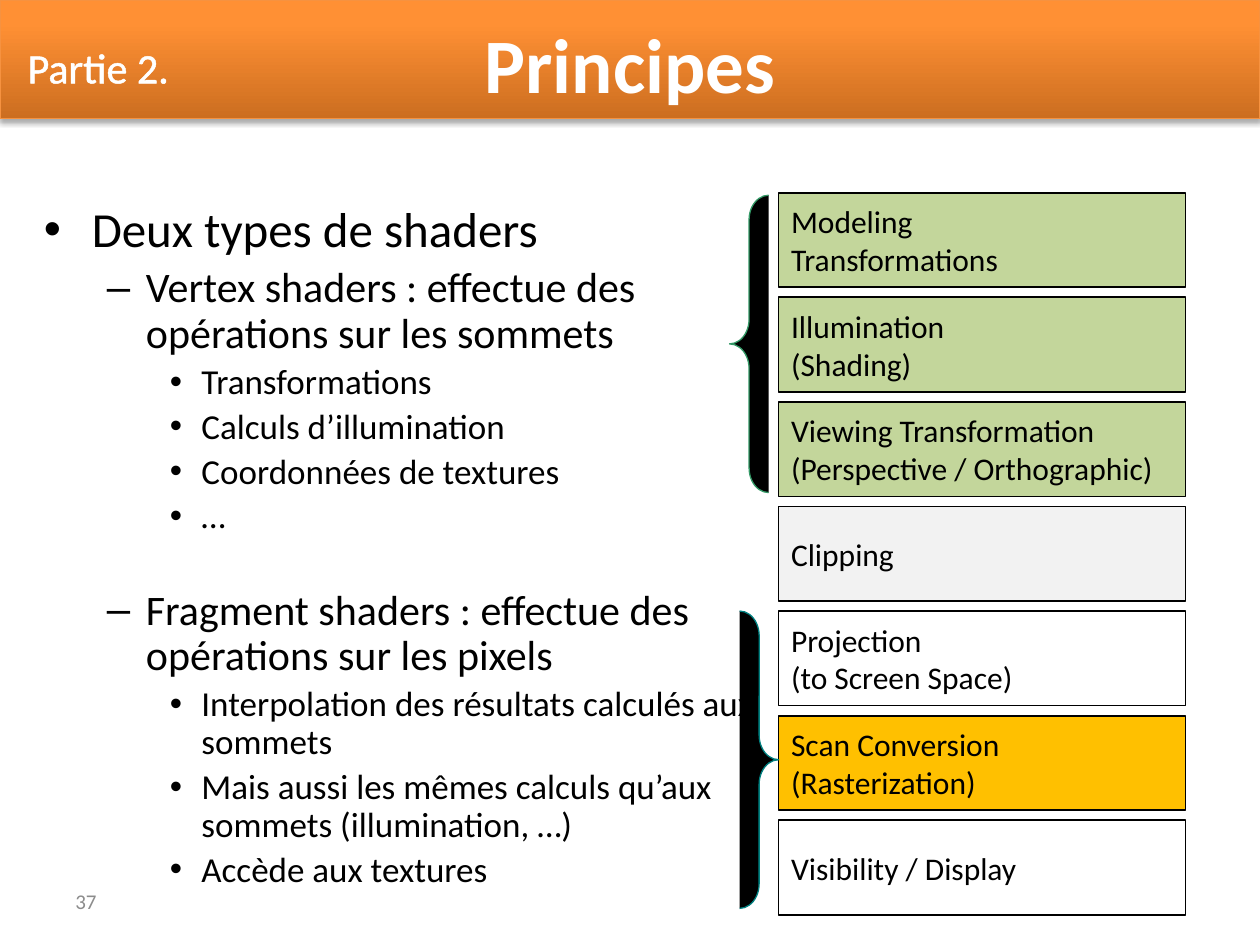
from lxml import etree
from pptx import Presentation
from pptx.dml.color import RGBColor
from pptx.enum.shapes import MSO_SHAPE
from pptx.enum.text import MSO_ANCHOR, PP_ALIGN
from pptx.oxml import parse_xml
from pptx.oxml.ns import nsdecls, qn
from pptx.util import Inches, Pt

RECTANGLE = MSO_SHAPE.RECTANGLE
LEFT_BRACE, RIGHT_BRACE = MSO_SHAPE.LEFT_BRACE, MSO_SHAPE.RIGHT_BRACE
MIDDLE, TOP = MSO_ANCHOR.MIDDLE, MSO_ANCHOR.TOP
LEFT, CENTER = PP_ALIGN.LEFT, PP_ALIGN.CENTER
FONT = "Calibri"

# Per outline level: size in points, bullet, left margin and hanging indent in inches
LEVELS = [(28, "•", 0.38, 0.38), (24, "–", 0.81, 0.31), (20, "•", 1.25, 0.25)]
GROUP_GAP = Pt(30)
OUTLINE = [
    (0, "Deux types de shaders"),
    (1, "Vertex shaders : effectue des opérations sur les sommets"),
    (2, "Transformations"),
    (2, "Calculs d’illumination"),
    (2, "Coordonnées de textures"),
    (2, "…"),
    (1, "Fragment shaders : effectue des opérations sur les pixels"),
    (2, "Interpolation des résultats calculés aux sommets"),
    (2, "Mais aussi les mêmes calculs qu’aux sommets (illumination, …)"),
    (2, "Accède aux textures"),
]
VERTEX, NEUTRAL, PLAIN, FRAGMENT = "C3D69B", "F2F2F2", "FFFFFF", "FFC000"
STAGES = [
    ("Modeling\nTransformations", VERTEX),
    ("Illumination\n(Shading)", VERTEX),
    ("Viewing Transformation\n(Perspective / Orthographic)", VERTEX),
    ("Clipping", NEUTRAL),
    ("Projection\n(to Screen Space)", PLAIN),
    ("Scan Conversion\n(Rasterization)", FRAGMENT),
    ("Visibility / Display", PLAIN),
]


def rgb(color):
    return RGBColor.from_string(color)


def style_font(font, size, color, bold=False):
    font.name, font.size, font.bold = FONT, Pt(size), bold
    font.color.rgb = rgb(color)


def write(frame, text, size, color, align=LEFT, anchor=MIDDLE, bold=False):
    frame.word_wrap = True
    frame.vertical_anchor = anchor
    frame.text = text
    for paragraph in frame.paragraphs:
        paragraph.alignment = align
        for run in paragraph.runs:
            style_font(run.font, size, color, bold)


def add_label(slide, left, top, width, height, *text_style, **options):
    label = slide.shapes.add_textbox(left, top, width, height)
    write(label.text_frame, *text_style, **options)
    return label.text_frame.paragraphs[0]


def add_outlined_shape(slide, kind, box, fill, line, line_width):
    shape = slide.shapes.add_shape(kind, *box)
    shape.shadow.inherit = False
    shape.fill.solid()
    shape.fill.fore_color.rgb = rgb(fill)
    shape.line.color.rgb = rgb(line)
    shape.line.width = Pt(line_width)
    return shape


def add_bullet(paragraph, bullet, margin, hanging):
    properties = paragraph._p.get_or_add_pPr()
    properties.set("marL", str(Inches(margin)))
    properties.set("indent", str(-Inches(hanging)))
    etree.SubElement(properties, qn("a:buFont"), typeface="Arial")
    etree.SubElement(properties, qn("a:buChar"), char=bullet)


def add_outline(slide, left, top, width, height):
    frame = slide.shapes.add_textbox(left, top, width, height).text_frame
    frame.word_wrap = True
    frame.text = "\n".join(text for _, text in OUTLINE)
    previous = None
    for paragraph, (level, _) in zip(frame.paragraphs, OUTLINE):
        size, bullet, margin, hanging = LEVELS[level]
        add_bullet(paragraph, bullet, margin, hanging)
        paragraph.level = level
        paragraph.line_spacing = 0.9
        if previous is not None:
            starts_group = level < previous
            paragraph.space_before = GROUP_GAP if starts_group else Pt(0.2 * size)
        style_font(paragraph.runs[0].font, size, "000000")
        previous = level


def add_pipeline(slide, left, top, width, height):
    pitch = Inches(0.83)
    stage_height = height - pitch * (len(STAGES) - 1)
    for row, (text, fill) in enumerate(STAGES):
        box = (left, top + row * pitch, width, stage_height)
        stage = add_outlined_shape(slide, RECTANGLE, box, fill, "000000", 1)
        write(stage.text_frame, text, 18, "000000")

    brace_size = Inches(0.31), Inches(2.36)
    for kind, offset, brace_top, line in (
        (LEFT_BRACE, Inches(0.39), top + Inches(0.02), "339966"),
        (RIGHT_BRACE, Inches(0.31), top + 4 * pitch, "008080"),
    ):
        box = (left - offset, brace_top, *brace_size)
        brace = add_outlined_shape(slide, kind, box, "000000", line, 0.75)
        brace.adjustments[0] = 0.63


def add_banner(slide, left, top, width, height):
    banner = add_outlined_shape(
        slide, RECTANGLE, (left, top, width, height), "FF9034", "F69240", 0.75)
    properties = banner._element.spPr
    stops = "".join(
        f'<a:gs pos="{percent * 1000}"><a:srgbClr val="{color}"/></a:gs>'
        for percent, color in ((0, "CC6E20"), (80, "FF9034"), (100, "FF9136")))
    properties.replace(properties.find(qn("a:solidFill")), parse_xml(
        f'<a:gradFill {nsdecls("a")}><a:gsLst>{stops}</a:gsLst>'
        '<a:lin ang="16200000" scaled="0"/></a:gradFill>'))
    properties.find(qn("a:effectLst")).append(parse_xml(
        f'<a:outerShdw {nsdecls("a")} blurRad="{Pt(3.1)}" dist="{Pt(1.8)}" '
        'dir="5400000" rotWithShape="0"><a:srgbClr val="000000">'
        '<a:alpha val="35000"/></a:srgbClr></a:outerShdw>'))

    inset = Inches(0.08)
    add_label(slide, left + Inches(0.31), top + inset, width - Inches(0.62),
              Inches(0.84), "Principes", 44, "FFFFFF", align=CENTER, bold=True)
    part = add_label(slide, left + inset, top + inset, Inches(1.4), Inches(0.77),
                     "Partie 2.", 24, "FFFFFF", align=CENTER, anchor=TOP)
    part.line_spacing = 1.5
    part.runs[0]._r.get_or_add_rPr().insert(0, parse_xml(
        f'<a:ln {nsdecls("a")} w="{Pt(1.45)}"><a:solidFill>'
        '<a:srgbClr val="FFFFFF"/></a:solidFill></a:ln>'))


def main():
    presentation = Presentation()
    presentation.slide_width, presentation.slide_height = Inches(10), Inches(7.5)
    slide = presentation.slides.add_slide(presentation.slide_layouts[6])
    add_label(slide, Inches(0.5), Inches(6.95), Inches(2.33), Inches(0.4),
              "37", 12, "8C8C8C")
    add_outline(slide, Inches(0.25), Inches(1.58), Inches(5.85), Inches(5.75))
    add_pipeline(slide, Inches(6.18), Inches(1.53), Inches(3.23), Inches(5.73))
    add_banner(slide, 0, 0, presentation.slide_width, Inches(0.94))
    presentation.save("out.pptx")


if __name__ == "__main__":
    main()
